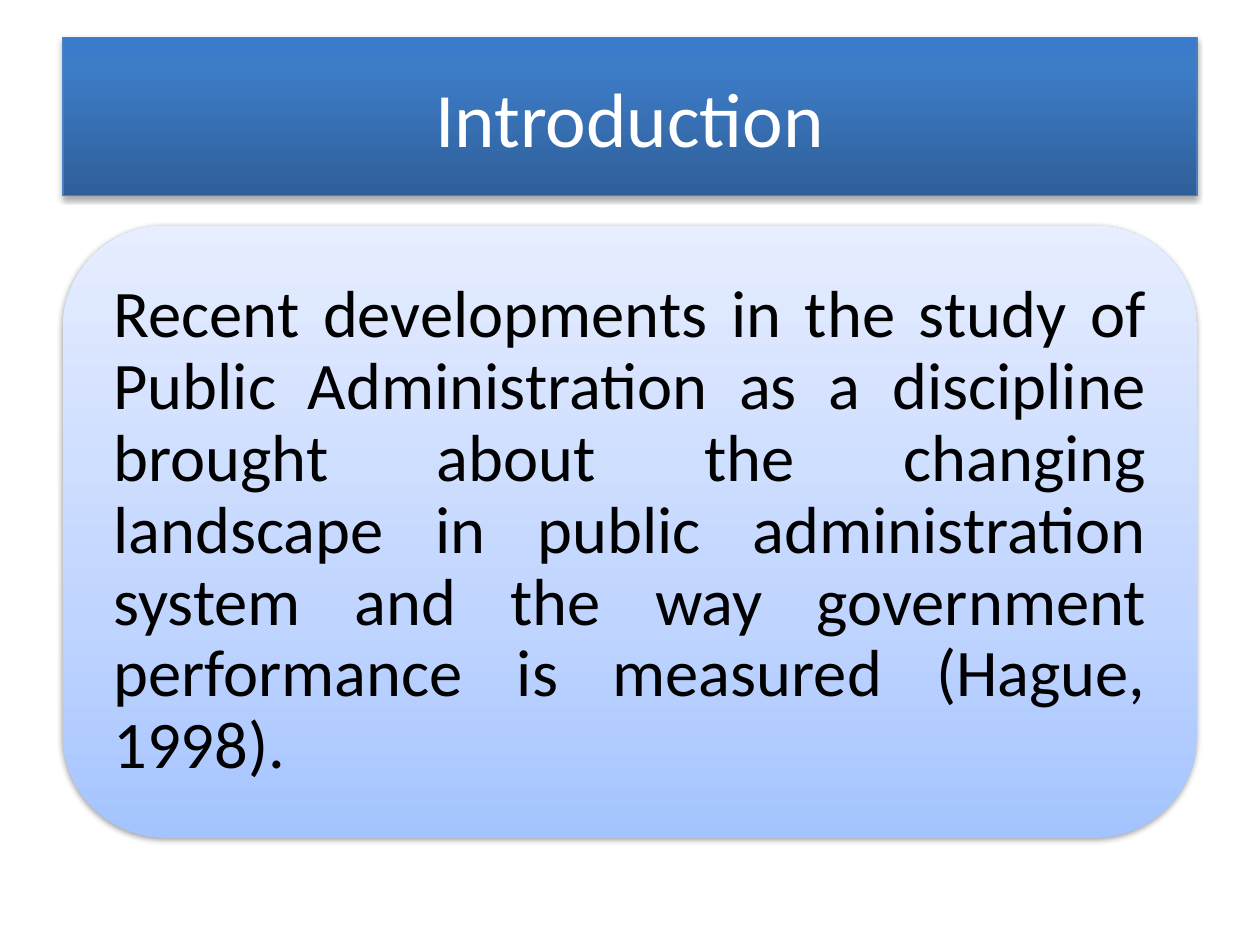
from dataclasses import dataclass

from lxml import etree
from pptx import Presentation
from pptx.dml.color import RGBColor
from pptx.enum.shapes import MSO_SHAPE
from pptx.enum.text import MSO_ANCHOR, PP_ALIGN
from pptx.oxml.ns import qn
from pptx.util import Pt

RECT, ROUNDED = MSO_SHAPE.RECTANGLE, MSO_SHAPE.ROUNDED_RECTANGLE
MIDDLE = MSO_ANCHOR.MIDDLE
CENTER, JUSTIFY = PP_ALIGN.CENTER, PP_ALIGN.JUSTIFY
PX = 9144  # EMU per px, 100 px to the inch


@dataclass(frozen=True)
class Theme:
    font: str = "Calibri"
    title_size: int = 44
    body_size: int = 38
    title_color: str = "FFFFFF"
    body_color: str = "000000"
    shadow: str = "000000"
    title_line: str = "4B7EBC"
    title_stops: tuple = ((0, "2F5F99"), (80, "3D7CC7"), (100, "3A7CCB"))
    body_stops: tuple = ((0, "A4C4FF"), (35, "BFD4FF"), (100, "E6EEFF"))


THEME = Theme()

INTRO = (
    "Recent developments in the study of Public Administration as a discipline "
    "brought about the changing landscape in public administration system and "
    "the way government performance is measured (Hague, 1998)."
)


def emu(*lengths):
    return [n * PX for n in lengths]


def add_color(parent, color, **mods):
    clr = etree.SubElement(parent, qn("a:srgbClr"), val=color)
    for name, percent in mods.items():
        etree.SubElement(clr, qn(f"a:{name}"), val=str(percent * 1000))


def set_gradient(sp, stops):
    """Fill upwards from the first stop at the bottom edge."""
    sp.fill.gradient()
    sp.fill.gradient_angle = 90
    gs_list = sp._element.spPr.find(f".//{qn('a:gsLst')}")
    for gs in list(gs_list):
        gs_list.remove(gs)
    for percent, color in stops:
        gs = etree.SubElement(gs_list, qn("a:gs"), pos=str(percent * 1000))
        add_color(gs, color)


def set_shadow(sp, alpha, blur, dist):
    """Cast a soft shadow straight down; blur and dist are in points."""
    sp.shadow.inherit = False
    effects = sp._element.spPr.find(qn("a:effectLst"))
    shadow = etree.SubElement(
        effects, qn("a:outerShdw"), blurRad=str(Pt(blur)), dist=str(Pt(dist)),
        dir="5400000", rotWithShape="0")
    add_color(shadow, THEME.shadow, alpha=alpha)


def set_text(sp, text, *, size, color, align, spacing=1.0, inset=None):
    tf = sp.text_frame
    tf.word_wrap = True
    tf.vertical_anchor = MIDDLE
    if inset is not None:
        tf.margin_left = tf.margin_top = tf.margin_right = tf.margin_bottom = inset * PX
    p = tf.paragraphs[0]
    p.alignment = align
    p.line_spacing = spacing
    r = p.add_run()
    r.text = text
    r.font.name = THEME.font
    r.font.size = Pt(size)
    r.font.color.rgb = RGBColor.from_string(color)


def add_title(s, box, text):
    sp = s.shapes.add_shape(RECT, *emu(*box))
    set_gradient(sp, THEME.title_stops)
    sp.line.color.rgb = RGBColor.from_string(THEME.title_line)
    sp.line.width = Pt(0.75)
    set_shadow(sp, alpha=35, blur=3.1, dist=1.8)
    set_text(sp, text, size=THEME.title_size, color=THEME.title_color, align=CENTER)


def add_body_card(s, box, text):
    x, y, w, h = box
    pad = 24
    group = s.shapes.add_group_shape()
    card = group.shapes.add_shape(ROUNDED, *emu(*box))
    set_gradient(card, THEME.body_stops)
    card.line.fill.background()
    set_shadow(card, alpha=38, blur=3.1, dist=1.6)
    label = group.shapes.add_textbox(*emu(x + pad, y + pad, w - 2 * pad, h - 2 * pad))
    set_text(label, text, size=THEME.body_size, color=THEME.body_color,
             align=JUSTIFY, spacing=0.9, inset=16)


def main():
    prs = Presentation()
    prs.slide_width, prs.slide_height = emu(1000, 750)
    s = prs.slides.add_slide(prs.slide_layouts[6])
    add_title(s, (50, 30, 900, 125), "Introduction")
    add_body_card(s, (50, 179, 900, 486), INTRO)
    prs.save("out.pptx")


if __name__ == "__main__":
    main()
